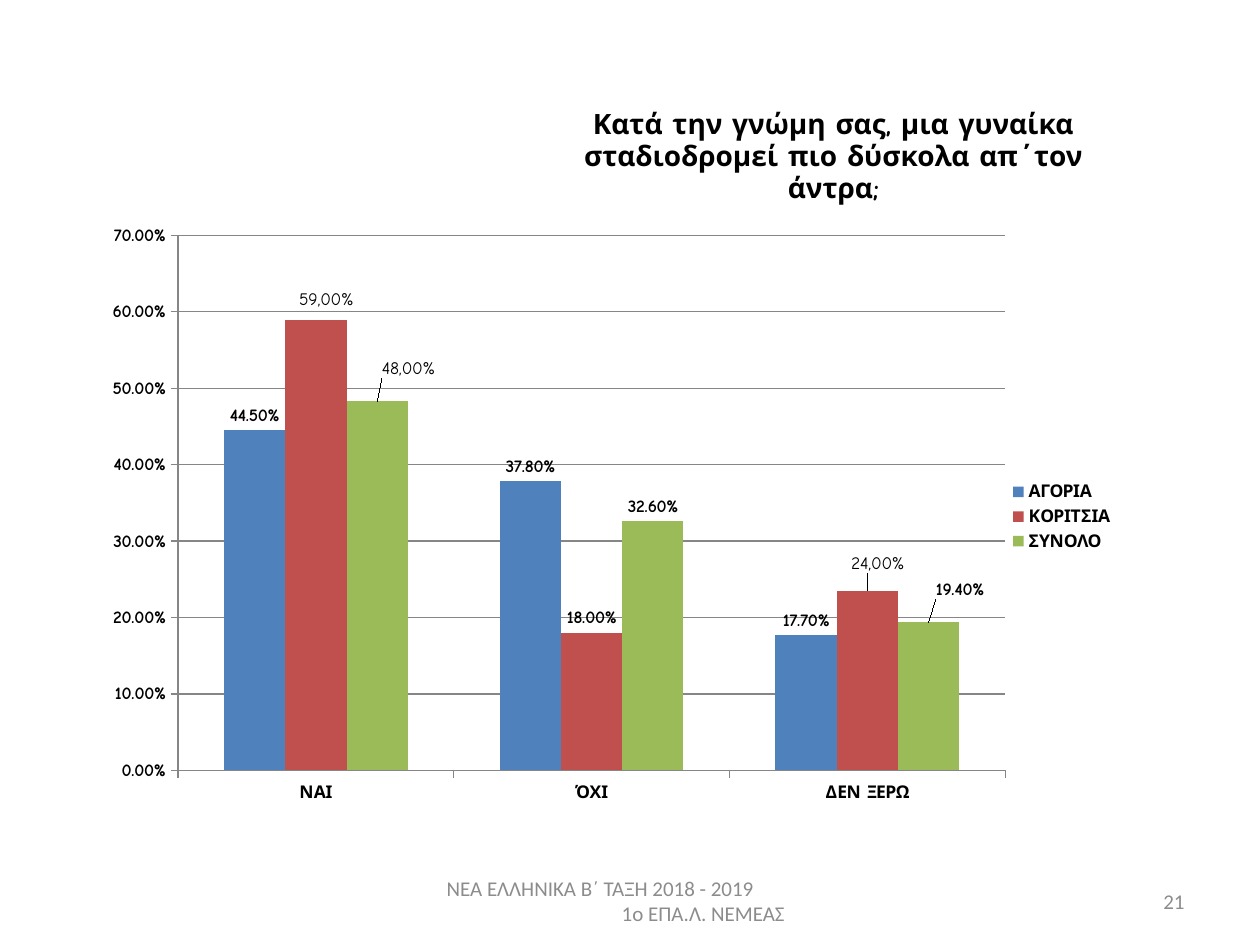
from dataclasses import dataclass, field

from lxml.etree import SubElement as Sub
from pptx import Presentation
from pptx.chart.data import CategoryChartData as Data
from pptx.dml.color import RGBColor
from pptx.enum.chart import XL_CHART_TYPE as Kind
from pptx.enum.chart import XL_LABEL_POSITION as Spot
from pptx.enum.chart import XL_LEGEND_POSITION as Side
from pptx.enum.chart import XL_TICK_MARK as Tick
from pptx.enum.text import MSO_ANCHOR as Anchor
from pptx.enum.text import PP_ALIGN as Align
from pptx.oxml.ns import qn
from pptx.util import Pt

FACE = "Comic Neue"
PLAIN = "Calibri"
BLACK = "000000"
GREY = "8C8C8C"
RULE = "868686"


@dataclass
class Label:
    point: int
    dx: float
    dy: float
    text: str = ""


@dataclass
class Group:
    name: str
    vals: tuple[float, ...]
    fill: str
    labels: list[Label] = field(default_factory=list)


GROUPS = [
    Group("ΑΓΟΡΙΑ", (0.445, 0.378, 0.177), "4F81BD"),
    Group("ΚΟΡΙΤΣΙΑ", (0.589, 0.18, 0.235), "C0504D",
          [Label(0, 0.01, -0.01, "59,00%"), Label(2, 0.01, -0.02, "24,00%")]),
    Group("ΣΥΝΟΛΟ", (0.483, 0.326, 0.194), "9BBB59",
          [Label(0, 0.03, -0.03, "48,00%"), Label(2, 0.03, -0.03)]),
]


def paint(color, code: str) -> None:
    color.rgb = RGBColor.from_string(code)


def style(font, size: float = 10, face: str = FACE, color: str = BLACK,
          bold: bool = True) -> None:
    font.size, font.name, font.bold = Pt(size), face, bold
    paint(font.color, color)


def write(para, text: str, align=Align.CENTER, indent: float = 0, **look) -> None:
    para.alignment = align
    if indent:
        props = para._p.get_or_add_pPr()
        props.set("marL", str(Pt(indent)))
        props.set("indent", "0")
    run = para.add_run()
    run.text = text
    style(run.font, **look)


def add_box(slide, left: float, top: float, width: float, height: float):
    frame = slide.shapes.add_textbox(Pt(left), Pt(top), Pt(width), Pt(height)).text_frame
    frame.word_wrap = True
    frame.vertical_anchor = Anchor.MIDDLE
    return frame


def add_head(slide) -> None:
    table = slide.shapes.add_table(1, 1, Pt(320.4), Pt(54.7), Pt(311.8), Pt(62.6)).table
    table.first_row = table.horz_banding = False
    cell = table.cell(0, 0)
    cell.fill.background()
    cell.margin_left = cell.margin_right = cell.margin_top = cell.margin_bottom = 0
    cell.vertical_anchor = Anchor.BOTTOM
    write(cell.text_frame.paragraphs[0],
          "Κατά την γνώμη σας, μια γυναίκα σταδιοδρομεί πιο δύσκολα απ΄τον άντρα;",
          size=16)


def set_place(layout, **parts) -> None:
    manual = Sub(layout, qn("c:manualLayout"))
    for tag, val in parts.items():
        Sub(manual, qn(f"c:{tag}")).set("val", str(val))


def add_label(series, label: Label) -> None:
    item = series.points[label.point].data_label
    if label.text:
        write(item.text_frame.paragraphs[0], label.text, bold=False)
    else:
        style(item.font)
    node = series._element.xpath(f'c:dLbls/c:dLbl[c:idx/@val="{label.point}"]')[0]
    layout = Sub(node, qn("c:layout"))
    node.insert(1, layout)
    set_place(layout, x=label.dx, y=label.dy)


def draw_group(series, group: Group) -> None:
    series.format.fill.solid()
    paint(series.format.fill.fore_color, group.fill)
    series.invert_if_negative = False
    labels = series.data_labels
    labels.show_value = True
    labels.number_format = "0.00%"
    labels.number_format_is_linked = False
    labels.position = Spot.OUTSIDE_END
    style(labels.font)
    for label in group.labels:
        add_label(series, label)


def draw_line(line) -> None:
    paint(line.color, RULE)
    line.width = Pt(0.75)


def draw_axis(axis) -> None:
    axis.major_tick_mark = Tick.OUTSIDE
    axis.minor_tick_mark = Tick.NONE
    style(axis.tick_labels.font)
    draw_line(axis.format.line)


def add_graph(slide) -> None:
    data = Data(number_format="0.00%")
    data.categories = ["ΝΑΙ", "ΌΧΙ", "ΔΕΝ ΞΕΡΩ"]
    for group in GROUPS:
        data.add_series(group.name, group.vals)
    chart = slide.shapes.add_chart(Kind.COLUMN_CLUSTERED, Pt(48.2), Pt(122.4),
                                   Pt(595.4), Pt(345.6), data).chart
    style(chart.font, face=PLAIN, bold=False)
    chart.has_title = False
    chart.has_legend = True
    chart.legend.position = Side.RIGHT
    chart.legend.include_in_layout = False
    style(chart.legend.font)

    scale = chart.value_axis
    for axis in (chart.category_axis, scale):
        draw_axis(axis)
    scale.minimum_scale, scale.maximum_scale, scale.major_unit = 0, 0.7, 0.1
    scale.tick_labels.number_format = "0.00%"
    scale.tick_labels.number_format_is_linked = False
    draw_line(scale.major_gridlines.format.line)

    plot = chart.plots[0]
    plot.gap_width, plot.overlap = 150, 0
    plot.vary_by_categories = False
    for series, group in zip(plot.series, GROUPS):
        draw_group(series, group)

    area = chart._chartSpace.chart.plotArea
    for old in area.findall(qn("c:layout")):
        area.remove(old)
    layout = Sub(area, qn("c:layout"))
    area.insert(0, layout)
    set_place(layout, layoutTarget="inner", xMode="edge", yMode="edge",
              x=0.09, y=0.035, w=0.794, h=0.885)


def add_foot(slide) -> None:
    look = dict(size=12, face=PLAIN, color=GREY, bold=False)
    frame = add_box(slide, 246.2, 500.4, 228.2, 28.8)
    write(frame.paragraphs[0], "ΝΕΑ ΕΛΛΗΝΙΚΑ Β΄ ΤΑΞΗ 2018 - 2019",
          align=Align.LEFT, indent=2, **look)
    write(frame.add_paragraph(), "1ο ΕΠΑ.Λ. ΝΕΜΕΑΣ",
          align=Align.LEFT, indent=102, **look)
    page = add_box(slide, 516.2, 500.4, 167.8, 28.8)
    write(page.paragraphs[0], "21", align=Align.RIGHT, **look)


def main() -> None:
    deck = Presentation()
    deck.slide_width, deck.slide_height = Pt(720), Pt(540)
    slide = deck.slides.add_slide(deck.slide_layouts[6])
    add_foot(slide)
    add_graph(slide)
    add_head(slide)
    deck.save("out.pptx")


if __name__ == "__main__":
    main()
